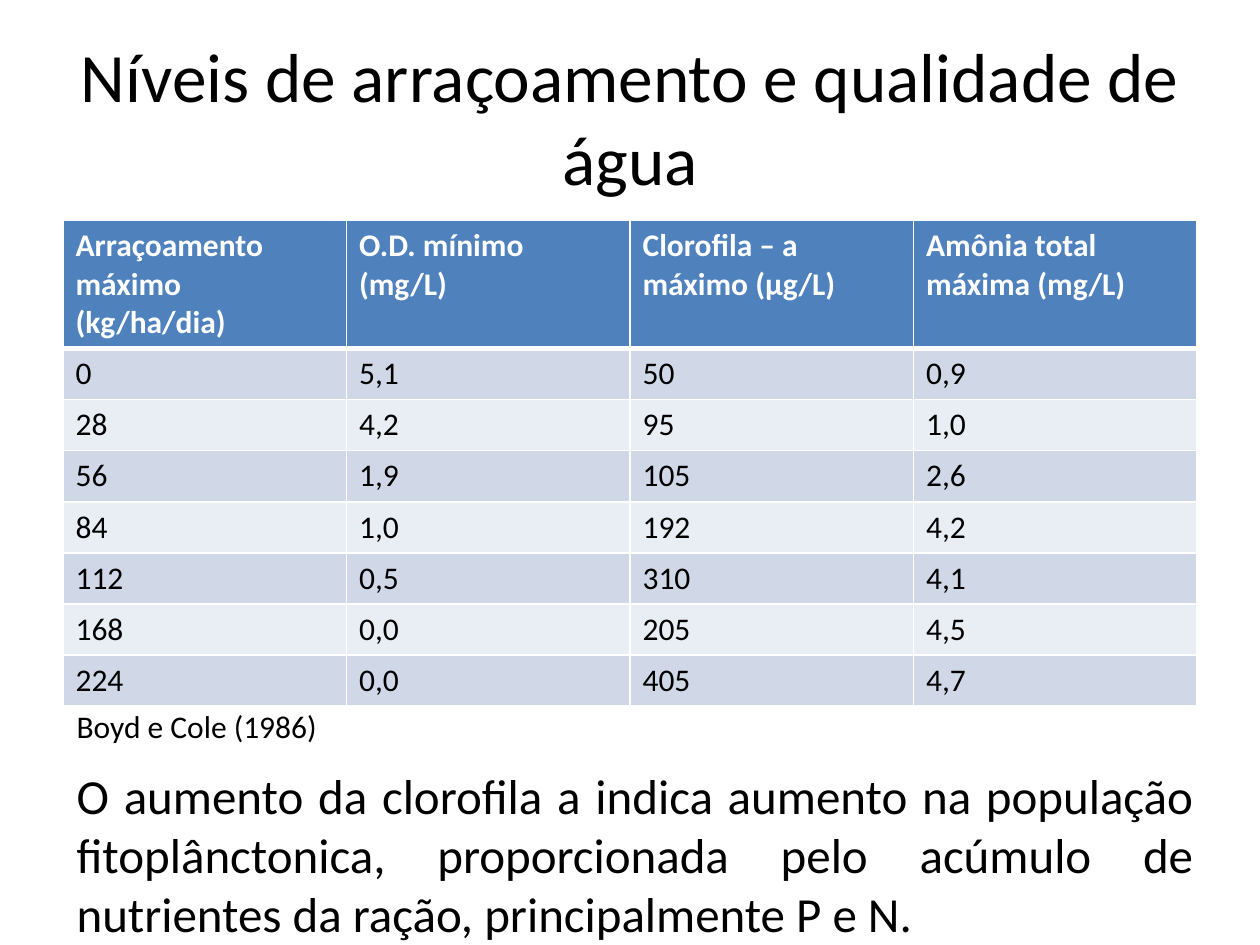
from typing import NamedTuple

from lxml.etree import SubElement
from pptx import Presentation
from pptx.dml.color import RGBColor
from pptx.enum.text import MSO_ANCHOR, PP_ALIGN
from pptx.oxml.ns import qn
from pptx.util import Inches, Pt

FONT = "Calibri"
BLACK, WHITE = "000000", "FFFFFF"
HEADER_BLUE = "4F81BD"
BANDS = ("D0D8E8", "E9EDF4")
TABLE_HEIGHT, HEADER_HEIGHT = 3.84, 1.0


class Measurement(NamedTuple):
    feeding: str
    oxygen: str
    chlorophyll: str
    ammonia: str


class Note(NamedTuple):
    text: str
    left: float
    top: float
    width: float
    height: float
    size: float
    align: PP_ALIGN


HEADER = Measurement(
    "Arraçoamento máximo (kg/ha/dia)",
    "O.D. mínimo (mg/L)",
    "Clorofila – a máximo (µg/L)",
    "Amônia total máxima (mg/L)",
)
MEASUREMENTS = [
    Measurement("0", "5,1", "50", "0,9"),
    Measurement("28", "4,2", "95", "1,0"),
    Measurement("56", "1,9", "105", "2,6"),
    Measurement("84", "1,0", "192", "4,2"),
    Measurement("112", "0,5", "310", "4,1"),
    Measurement("168", "0,0", "205", "4,5"),
    Measurement("224", "0,0", "405", "4,7"),
]
NOTES = [
    Note("Boyd e Cole (1986)", 0.51, 5.56, 2.52, 0.4, 18, PP_ALIGN.LEFT),
    Note(
        "O aumento da clorofila a indica aumento na população fitoplânctonica, "
        "proporcionada pelo acúmulo de nutrientes da ração, principalmente P e N.",
        0.51, 6.03, 9.06, 1.51, 28, PP_ALIGN.JUSTIFY,
    ),
]


def rgb(color: str) -> RGBColor:
    return RGBColor.from_string(color)


def write(frame, text: str, size: float, color: str = BLACK,
          bold: bool = False, align: PP_ALIGN = PP_ALIGN.LEFT) -> None:
    frame.text = text
    frame.word_wrap = True
    paragraph = frame.paragraphs[0]
    paragraph.alignment = align
    font = paragraph.runs[0].font
    font.name, font.size, font.bold = FONT, Pt(size), bold
    font.color.rgb = rgb(color)


def place(shape, left: float, top: float, width: float, height: float) -> None:
    shape.left, shape.top = Inches(left), Inches(top)
    shape.width, shape.height = Inches(width), Inches(height)


def set_borders(cell, top: float, bottom: float) -> None:
    """Draw white borders, 1 pt at the sides; they must precede the fill."""
    properties = cell._tc.get_or_add_tcPr()
    widths = {"a:lnL": 1, "a:lnR": 1, "a:lnT": top, "a:lnB": bottom}
    for position, (tag, width) in enumerate(widths.items()):
        line = SubElement(properties, qn(tag), w=str(Pt(width)))
        SubElement(SubElement(line, qn("a:solidFill")), qn("a:srgbClr"), val=WHITE)
        properties.insert(position, line)


def add_measurements(slide) -> None:
    rows = [HEADER, *MEASUREMENTS]
    table = slide.shapes.add_table(
        len(rows), len(HEADER),
        Inches(0.5), Inches(1.75), Inches(9), Inches(TABLE_HEIGHT),
    ).table
    body_height = (TABLE_HEIGHT - HEADER_HEIGHT) / len(MEASUREMENTS)
    for r, measurement in enumerate(rows):
        is_header = r == 0
        table.rows[r].height = Inches(HEADER_HEIGHT if is_header else body_height)
        fill = HEADER_BLUE if is_header else BANDS[(r - 1) % 2]
        for c, value in enumerate(measurement):
            cell = table.cell(r, c)
            write(cell.text_frame, value, 18, WHITE if is_header else BLACK, is_header)
            cell.fill.solid()
            cell.fill.fore_color.rgb = rgb(fill)
            set_borders(cell, top=3 if r == 1 else 1, bottom=3 if is_header else 1)


def add_note(slide, note: Note) -> None:
    box = slide.shapes.add_textbox(0, 0, 0, 0)
    place(box, note.left, note.top, note.width, note.height)
    write(box.text_frame, note.text, note.size, align=note.align)


def main() -> None:
    presentation = Presentation()
    presentation.slide_width, presentation.slide_height = Inches(10), Inches(7.5)
    slide = presentation.slides.add_slide(presentation.slide_layouts[5])

    title = slide.shapes.title
    place(title, 0.5, 0.3, 9, 1.25)
    write(title.text_frame, "Níveis de arraçoamento e qualidade de água", 39.6,
          align=PP_ALIGN.CENTER)
    title.text_frame.vertical_anchor = MSO_ANCHOR.MIDDLE

    add_measurements(slide)
    for note in NOTES:
        add_note(slide, note)
    presentation.save("out.pptx")


if __name__ == "__main__":
    main()
